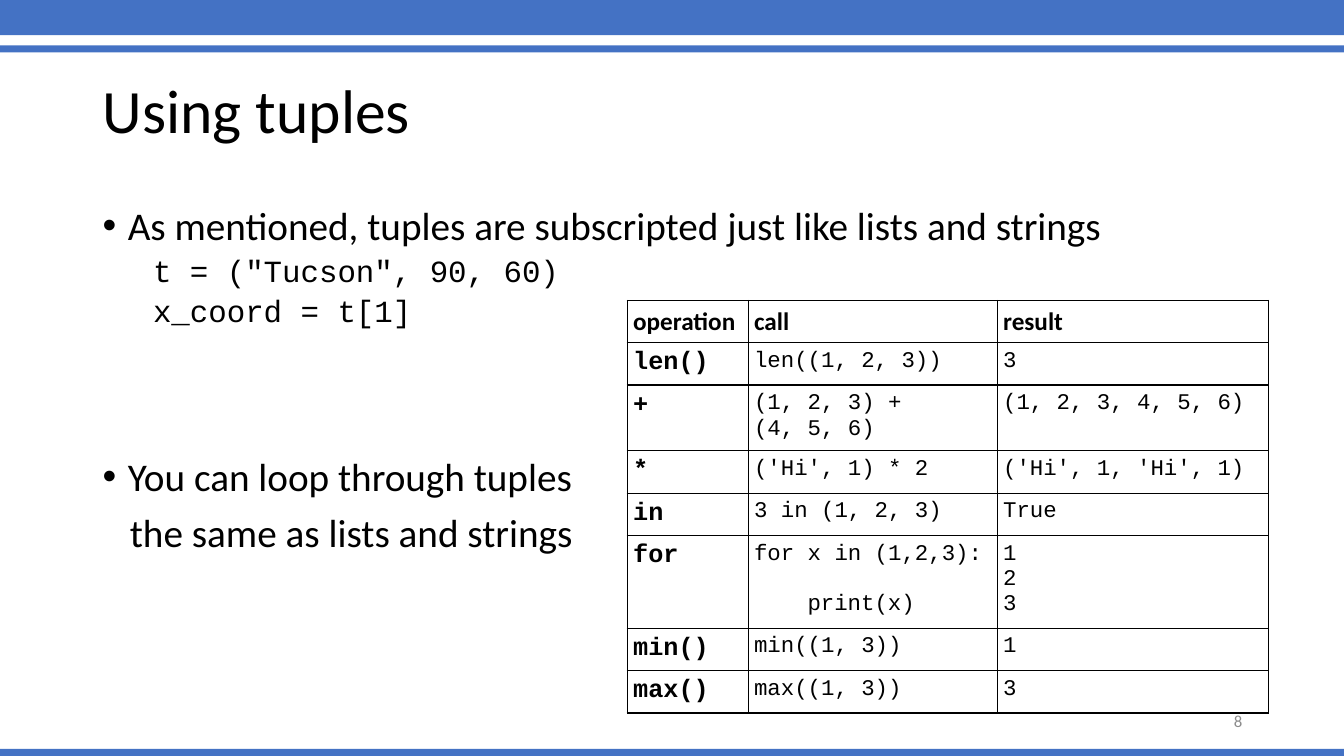
from collections import namedtuple
from dataclasses import dataclass

from lxml import etree
from pptx import Presentation
from pptx.dml.color import RGBColor
from pptx.enum.shapes import MSO_SHAPE
from pptx.enum.text import MSO_ANCHOR, PP_ALIGN
from pptx.oxml.ns import qn
from pptx.util import Inches, Pt

RECT = MSO_SHAPE.RECTANGLE
TOP, MIDDLE = MSO_ANCHOR.TOP, MSO_ANCHOR.MIDDLE
LEFT, RIGHT = PP_ALIGN.LEFT, PP_ALIGN.RIGHT
WIDE, HIGH = Inches(13.33), Inches(7.5)
TITLE_ONLY = 5

Box = namedtuple("Box", "left top width height")
Look = namedtuple("Look", "face size color bold", defaults=(False,))


@dataclass(frozen=True)
class Theme:
    """Colours and type styles of the slide."""
    bar = RGBColor(0x44, 0x72, 0xC4)
    ink = RGBColor(0, 0, 0)
    gray = RGBColor(0x8C, 0x8C, 0x8C)
    rule = "000000"
    title = Look("Calibri", 44, ink)
    point = Look("Calibri", 28, ink)
    code = Look("Courier New", 22, ink)
    head = Look("Calibri", 18, ink, True)
    name = Look("Courier New", 18, ink, True)
    cell = Look("Courier New", 16, ink)
    page = Look("Calibri", 12, gray)


THEME = Theme()

BARS = [(-0.4, 5.07), (6, 0.93), (99.07, 0.93)]
POINTS = [
    ("As mentioned, tuples are subscripted just like lists and strings", THEME.point, 0.25, 10, True),
    ('t = ("Tucson", 90, 60)', THEME.code, 0.5, 5, False),
    ("x_coord = t[1]", THEME.code, 0.5, 5, False),
    ("You can loop through tuples", THEME.point, 0.25, 91.6, True),
    ("the same as lists and strings", THEME.point, 0.27, 10, False),
]
COLS = [1.2, 2.47, 2.69]
ROWS = [0.42, 0.39, 0.62, 0.4, 0.39, 0.87, 0.39, 0.39]
CALLS = [
    ("operation", "call", "result"),
    ("len()", "len((1, 2, 3))", "3"),
    ("+", "(1, 2, 3) +\n(4, 5, 6)", "(1, 2, 3, 4, 5, 6)"),
    ("*", "('Hi', 1) * 2", "('Hi', 1, 'Hi', 1)"),
    ("in", "3 in (1, 2, 3)", "True"),
    ("for", "for x in (1,2,3):\nprint(x)", "1\n2\n3"),
    ("min()", "min((1, 3))", "1"),
    ("max()", "max((1, 3))", "3"),
]


def area(left, top, width, height):
    """Turn percentages of the slide into a box."""
    return Box(int(WIDE * left / 100), int(HIGH * top / 100),
               int(WIDE * width / 100), int(HIGH * height / 100))


def style(para, look, align=LEFT):
    """Set the font and alignment of a paragraph."""
    para.alignment = align
    font = para.font
    font.name, font.size, font.bold = look.face, Pt(look.size), look.bold
    font.color.rgb = look.color


def indent(para, left, hang=0):
    """Indent a paragraph by inches, with an optional hanging first line."""
    props = para._p.get_or_add_pPr()
    props.set("marL", str(Inches(left)))
    props.set("indent", str(-Inches(hang)))
    return props


def lines(frame, count):
    """Return the given number of paragraphs of a text frame."""
    return [frame.paragraphs[0]] + [frame.add_paragraph() for _ in range(count - 1)]


def draw_bar(slide, box):
    """Draw one coloured band."""
    bar = slide.shapes.add_shape(RECT, *box)
    bar.shadow.inherit = False
    bar.fill.solid()
    bar.fill.fore_color.rgb = THEME.bar
    bar.line.fill.background()


def draw_title(slide, box, text):
    """Place and format the title."""
    title = slide.shapes.title
    title.left, title.top, title.width, title.height = box
    frame = title.text_frame
    frame.text = text
    frame.vertical_anchor = MIDDLE
    para = frame.paragraphs[0]
    para.line_spacing = 0.9
    style(para, THEME.title)


def draw_points(slide, box):
    """Write the bullets and code lines."""
    frame = slide.shapes.add_textbox(*box).text_frame
    frame.word_wrap = True
    for para, (text, look, left, gap, dot) in zip(lines(frame, len(POINTS)), POINTS):
        para.text = text
        para.line_spacing = 0.9
        para.space_before = Pt(gap)
        props = indent(para, left, left if dot else 0)
        if dot:
            etree.SubElement(props, qn("a:buFont"), typeface="Arial")
            etree.SubElement(props, qn("a:buChar"), char="•")
        style(para, look)


def edge(cell):
    """Draw thin lines on all sides of a cell."""
    props = cell._tc.get_or_add_tcPr()
    for side in ("lnL", "lnR", "lnT", "lnB"):
        line = etree.SubElement(props, qn("a:" + side), w=str(Pt(1)))
        fill = etree.SubElement(line, qn("a:solidFill"))
        etree.SubElement(fill, qn("a:srgbClr"), val=THEME.rule)


def fill_cell(cell, text, look):
    """Write and format one table cell."""
    edge(cell)
    cell.fill.background()
    cell.vertical_anchor = TOP
    cell.margin_left = cell.margin_right = Inches(0.06)
    cell.margin_top = cell.margin_bottom = Inches(0.06)
    parts = text.split("\n")
    for para, part in zip(lines(cell.text_frame, len(parts)), parts):
        para.text = part
        if part == "print(x)":
            para.space_before = Pt(18)
            indent(para, 0.53)
        style(para, look)


def draw_table(slide, box):
    """Build the table of tuple operations."""
    table = slide.shapes.add_table(len(ROWS), len(COLS), *box).table
    table.first_row = table.horz_banding = False
    for col, width in zip(table.columns, COLS):
        col.width = Inches(width)
    for row, height, texts in zip(table.rows, ROWS, CALLS):
        row.height = Inches(height)
        looks = [THEME.name, THEME.cell, THEME.cell]
        if texts is CALLS[0]:
            looks = [THEME.head] * len(COLS)
        for cell, text, look in zip(row.cells, texts, looks):
            fill_cell(cell, text, look)


def draw_page(slide, box, text):
    """Write the page number."""
    frame = slide.shapes.add_textbox(*box).text_frame
    frame.word_wrap = True
    frame.vertical_anchor = MIDDLE
    frame.text = text
    style(frame.paragraphs[0], THEME.page, RIGHT)


def main():
    """Build and save the slide."""
    deck = Presentation()
    deck.slide_width, deck.slide_height = WIDE, HIGH
    slide = deck.slides.add_slide(deck.slide_layouts[TITLE_ONLY])
    for top, height in BARS:
        draw_bar(slide, area(0, top, 100, height))
    draw_title(slide, area(6.9, 5.33, 86.27, 19.33), "Using tuples")
    draw_points(slide, area(6.9, 26.67, 86.27, 69.2))
    draw_table(slide, area(46.66, 39.73, 47.71, 51.6))
    draw_page(slide, area(70.67, 92.67, 22.5, 5.33), "8")
    deck.save("out.pptx")


if __name__ == "__main__":
    main()
